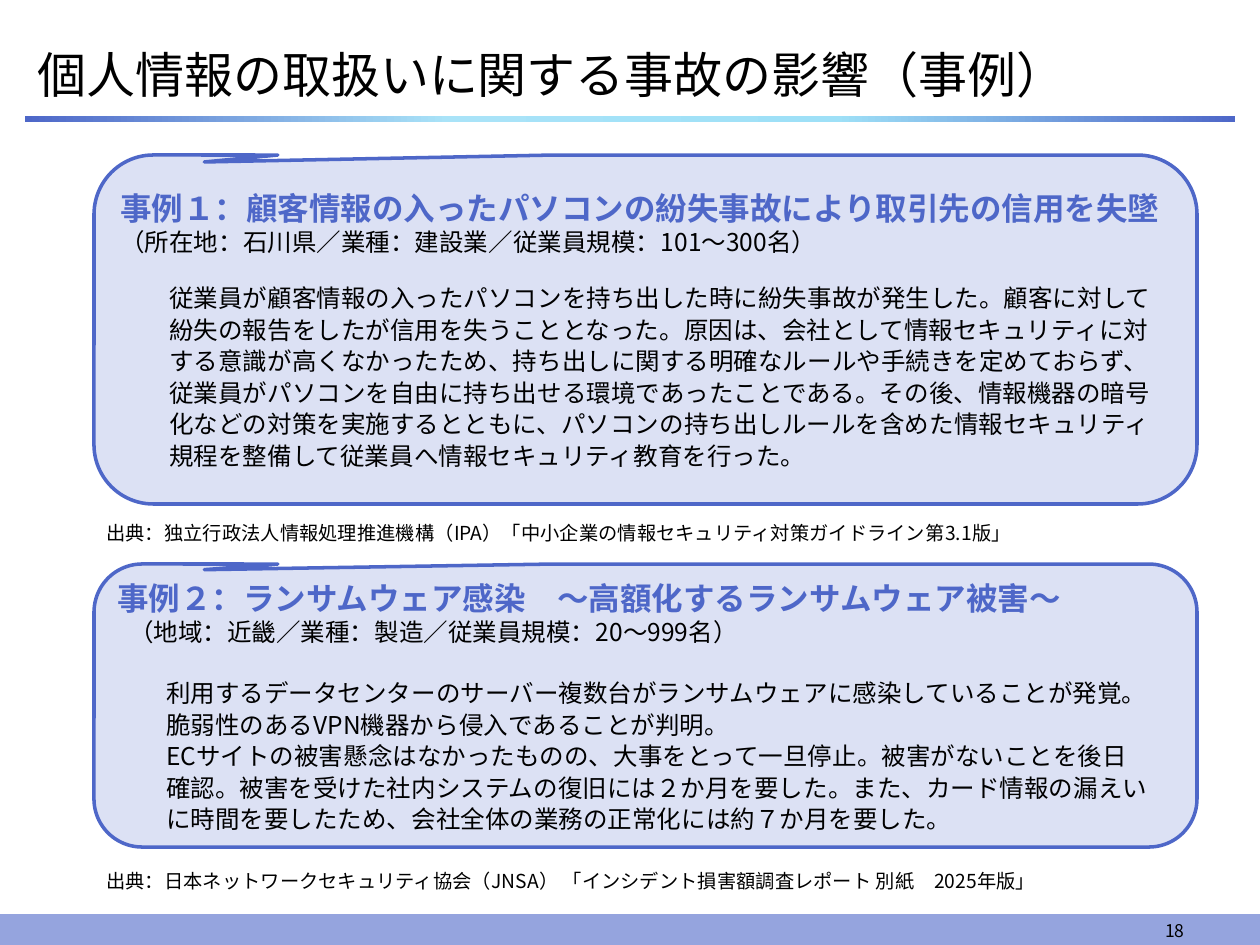
"""Build the slide on the effects of personal information incidents."""
from dataclasses import dataclass
from typing import Optional

import lxml.etree
import pptx
import pptx.dml.color
import pptx.enum.shapes
import pptx.enum.text
import pptx.oxml.ns
import pptx.util

RGB = pptx.dml.color.RGBColor
SHAPE = pptx.enum.shapes.MSO_SHAPE
ANCHOR = pptx.enum.text.MSO_ANCHOR
ALIGN = pptx.enum.text.PP_ALIGN
BLUE = RGB(0x4E, 0x67, 0xC8)
PALE = RGB(0xDC, 0xE1, 0xF4)
BAND = RGB(0x95, 0xA4, 0xDE)
BLACK = RGB(0, 0, 0)
RULE_STOPS = ((0, "4E67C8"), (35, "A9E3F8"), (67, "9EE0F7"), (100, "4E67C8"))
FONT = "Noto Sans CJK JP"
EMU_PER_PX = 914400 / 126


@dataclass(frozen=True)
class Box:
    x: int
    y: int
    w: int
    h: int


@dataclass(frozen=True)
class Para:
    text: str
    size: int = 14
    color: RGB = BLACK
    bold: bool = False
    margin: int = 0
    before: float = 0
    line: Optional[int] = None


@dataclass(frozen=True)
class Case:
    box: Box
    anchor: ANCHOR
    paras: tuple[Para, ...]


@dataclass(frozen=True)
class Label:
    box: Box
    text: str
    size: int
    align: ALIGN = ALIGN.LEFT
    anchor: ANCHOR = ANCHOR.TOP


def heading(text: str) -> Para:
    return Para(text, 18, BLUE, True)


def body(text: str, before: float = 0) -> Para:
    return Para(text, margin=49, before=before, line=18)


CASES = (
    Case(Box(94, 155, 1103, 349), ANCHOR.MIDDLE, (
        heading("事例１：顧客情報の入ったパソコンの紛失事故により取引先の信用を失墜"),
        Para("（所在地：石川県／業種：建設業／従業員規模：101～300名）"),
        body("従業員が顧客情報の入ったパソコンを持ち出した時に紛失事故が発生した。"
             "顧客に対して紛失の報告をしたが信用を失うこととなった。"
             "原因は、会社として情報セキュリティに対する意識が高くなかったため、"
             "持ち出しに関する明確なルールや手続きを定めておらず、"
             "従業員がパソコンを自由に持ち出せる環境であったことである。"
             "その後、情報機器の暗号化などの対策を実施するとともに、"
             "パソコンの持ち出しルールを含めた情報セキュリティ規程を整備して"
             "従業員へ情報セキュリティ教育を行った。", 14.5),
    )),
    Case(Box(94, 564, 1103, 283), ANCHOR.TOP, (
        heading("事例２：ランサムウェア感染\u3000～高額化するランサムウェア被害～".replace("\u3000", "　")),
        Para("（地域：近畿／業種：製造／従業員規模：20～999名）", margin=12),
        body("利用するデータセンターのサーバー複数台がランサムウェアに感染していることが発覚。", 17),
        body("脆弱性のあるVPN機器から侵入であることが判明。"),
        body("ECサイトの被害懸念はなかったものの、大事をとって一旦停止。被害がないことを後日"),
        body("確認。被害を受けた社内システムの復旧には２か月を要した。また、カード情報の漏えい"),
        body("に時間を要したため、会社全体の業務の正常化には約７か月を要した。"),
    )),
)
LABELS = (
    Label(Box(94, 515, 999, 37),
          "出典：独立行政法人情報処理推進機構（IPA）「中小企業の情報セキュリティ対策ガイドライン第3.1版」", 11),
    Label(Box(94, 863, 999, 37),
          "出典：日本ネットワークセキュリティ協会（JNSA） 「インシデント損害額調査レポート 別紙　2025年版」", 11),
    Label(Box(903, 908, 294, 39), "18", 10, ALIGN.RIGHT, ANCHOR.BOTTOM),
)


def px(n: int) -> pptx.util.Emu:
    return pptx.util.Emu(round(n * EMU_PER_PX))


def place(box: Box) -> tuple[pptx.util.Emu, ...]:
    return px(box.x), px(box.y), px(box.w), px(box.h)


def style(p, size: int, color: RGB = BLACK, bold: bool = False) -> None:
    for r in p.runs:
        r.font.name = FONT
        r.font.size = pptx.util.Pt(size)
        r.font.bold = bold
        r.font.color.rgb = color
        ea = lxml.etree.SubElement(r.font._element, pptx.oxml.ns.qn("a:ea"))
        ea.set("typeface", FONT)


def add_shape(s, kind: SHAPE, box: Box, fill: RGB, line: RGB, width: float):
    sp = s.shapes.add_shape(kind, *place(box))
    sp.shadow.inherit = False
    sp.fill.solid()
    sp.fill.fore_color.rgb = fill
    sp.line.color.rgb = line
    sp.line.width = pptx.util.Pt(width)
    return sp


def add_rule(s, box: Box) -> None:
    sp = s.shapes.add_shape(SHAPE.RECTANGLE, *place(box))
    sp.shadow.inherit = False
    sp.line.fill.background()
    sp.fill.gradient()
    sp.fill.gradient_angle = 0
    stops = sp._element.spPr.find(".//" + pptx.oxml.ns.qn("a:gsLst"))
    for stop in list(stops):
        stops.remove(stop)
    for pos, color in RULE_STOPS:
        stop = lxml.etree.SubElement(stops, pptx.oxml.ns.qn("a:gs"), pos=str(pos * 1000))
        lxml.etree.SubElement(stop, pptx.oxml.ns.qn("a:srgbClr"), val=color)


def add_case(s, case: Case) -> None:
    sp = add_shape(s, SHAPE.ROUNDED_RECTANGULAR_CALLOUT, case.box, PALE, BLUE, 2)
    for i, value in enumerate((-0.4, -0.48, 0.17)):
        sp.adjustments[i] = value
    tf = sp.text_frame
    tf.word_wrap = True
    tf.vertical_anchor = case.anchor
    tf.margin_left = tf.margin_right = px(9)
    tf.margin_top = tf.margin_bottom = px(1)
    for i, para in enumerate(case.paras):
        p = tf.paragraphs[0] if i == 0 else tf.add_paragraph()
        p.text = para.text
        p.alignment = ALIGN.LEFT
        p.space_before = pptx.util.Pt(para.before)
        if para.line:
            p.line_spacing = pptx.util.Pt(para.line)
        p._p.get_or_add_pPr().set("marL", str(px(para.margin)))
        style(p, para.size, para.color, para.bold)


def add_label(s, label: Label) -> None:
    tf = s.shapes.add_textbox(*place(label.box)).text_frame
    tf.word_wrap = True
    tf.vertical_anchor = label.anchor
    tf.text = label.text
    tf.paragraphs[0].alignment = label.align
    style(tf.paragraphs[0], label.size)


def set_title(s, box: Box, text: str) -> None:
    sp = s.shapes.title
    sp.left, sp.top, sp.width, sp.height = place(box)
    tf = sp.text_frame
    tf.text = text
    tf.vertical_anchor = ANCHOR.MIDDLE
    tf.paragraphs[0].alignment = ALIGN.LEFT
    style(tf.paragraphs[0], 28)


def main() -> None:
    prs = pptx.Presentation()
    prs.slide_width, prs.slide_height = px(1260), px(945)
    s = prs.slides.add_slide(prs.slide_layouts[5])
    add_shape(s, SHAPE.RECTANGLE, Box(0, 915, 1260, 30), BAND, BAND, 0.75)
    add_rule(s, Box(25, 116, 1210, 6))
    set_title(s, Box(25, 33, 1210, 82), "個人情報の取扱いに関する事故の影響（事例）")
    for case in CASES:
        add_case(s, case)
    for label in LABELS:
        add_label(s, label)
    prs.save("out.pptx")


if __name__ == "__main__":
    main()
